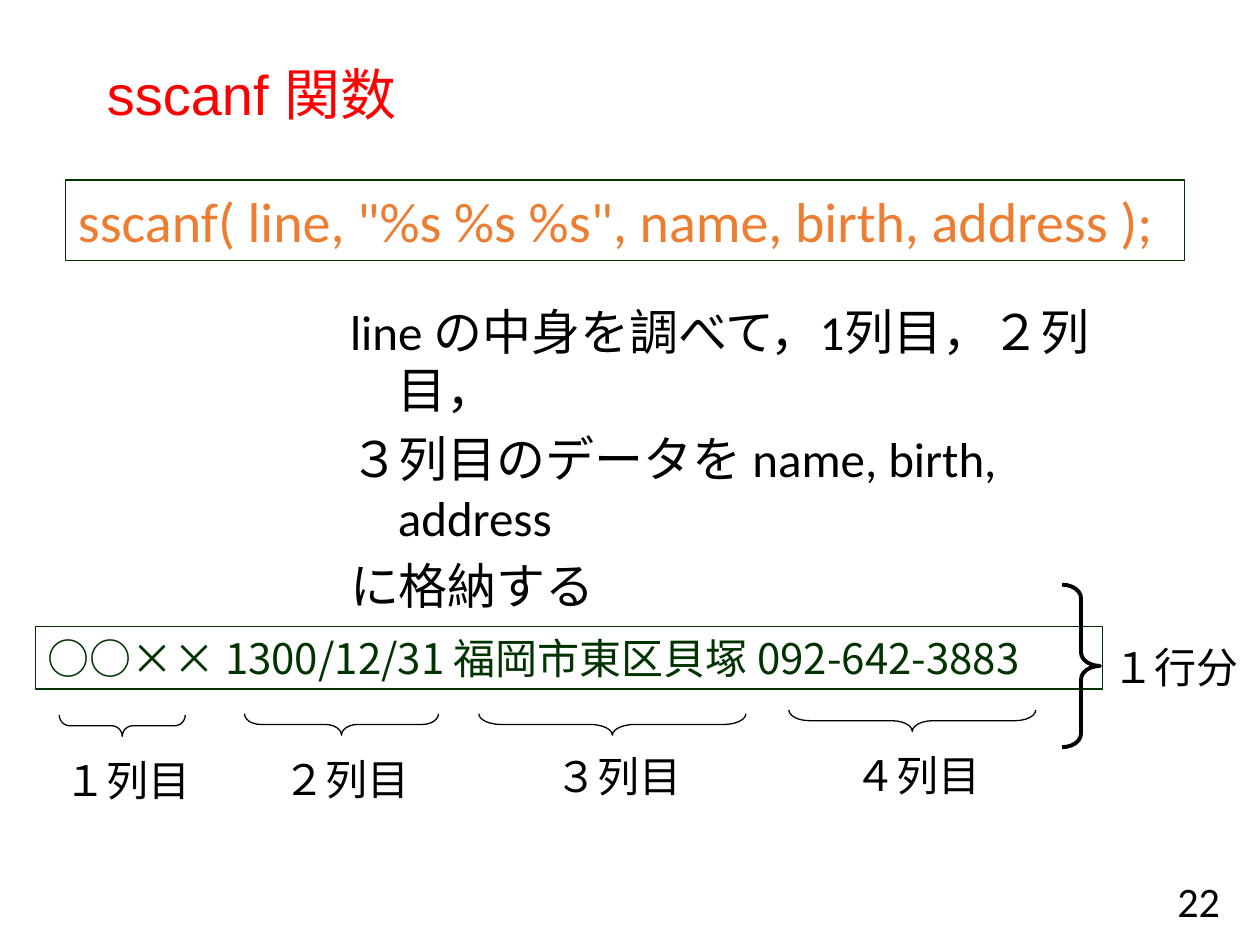
from lxml import etree
from pptx import Presentation
from pptx.dml.color import RGBColor
from pptx.enum.shapes import MSO_SHAPE
from pptx.enum.text import MSO_ANCHOR, MSO_AUTO_SIZE, PP_ALIGN
from pptx.oxml.ns import qn
from pptx.util import Inches, Pt

COLORS = {"title": "FF0000", "code": "ED7D31", "green": "003300", "black": "000000"}
LATIN, JAPANESE = "Calibri", "Noto Sans CJK JP"


def color(name):
    return RGBColor.from_string(COLORS[name])


def write(shape, text, size, ink="black", font=LATIN, wrap=False,
          anchor=MSO_ANCHOR.TOP, align=PP_ALIGN.LEFT):
    frame = shape.text_frame
    frame.text = text
    frame.word_wrap = wrap
    frame.auto_size = MSO_AUTO_SIZE.NONE if wrap else MSO_AUTO_SIZE.SHAPE_TO_FIT_TEXT
    frame.vertical_anchor = anchor
    for paragraph in frame.paragraphs:
        paragraph.alignment = align
        for run in paragraph.runs:
            run.font.size = Pt(size)
            run.font.name = font
            run.font.color.rgb = color(ink)
            east_asian = etree.SubElement(run.font._element, qn("a:ea"))
            east_asian.set("typeface", JAPANESE)
    return frame


def add_text(slide, box, text, size, **style):
    return write(slide.shapes.add_textbox(*map(Inches, box)), text, size, **style)


def add_outline(slide, kind, box, ink, width):
    shape = slide.shapes.add_shape(kind, *map(Inches, box))
    shape.shadow.inherit = False
    shape.fill.background()
    shape.line.color.rgb = color(ink)
    shape.line.width = Pt(width)
    return shape


def add_framed_text(slide, box, text, size, **style):
    frame = add_outline(slide, MSO_SHAPE.RECTANGLE, box, "green", 0.75)
    write(frame, text, size, **style)


def add_brace(slide, box, width):
    brace = add_outline(slide, MSO_SHAPE.RIGHT_BRACE, box, "black", width)
    thickness, length = box[2:]
    brace.adjustments[0] = length / thickness / 12
    return brace


def add_explanation(slide, box):
    lines = ["line の中身を調べて，1列目，２列目，",
             "３列目のデータを name, birth, address",
             "に格納する"]
    frame = add_text(slide, box, "\n".join(lines), 28, wrap=True)
    for index, paragraph in enumerate(frame.paragraphs):
        # Hanging indent
        properties = paragraph._p.get_or_add_pPr()
        properties.set("marL", str(Inches(0.38)))
        properties.set("indent", str(-Inches(0.38)))
        if index:
            paragraph.space_before = Pt(5.6)


def add_column_mark(slide, center, middle, length, label_box, label):
    # A right brace turned to point down
    thickness = 0.17
    box = (center - thickness / 2, middle - length / 2, thickness, length)
    add_brace(slide, box, 0.75).rotation = 90
    add_text(slide, label_box, label, 24)


def add_data_line(slide, box):
    left, top, width, height = box
    add_framed_text(slide, box, "○○×× 1300/12/31 福岡市東区貝塚 092-642-3883", 24,
                    ink="green", font=JAPANESE)
    # Whole line
    add_brace(slide, (left + 8.15, top - 0.33, 0.3, 1.29), 2.25)
    add_text(slide, (left + 8.45, top + 0.07, 1.21, height), "１行分", 24)
    # Columns: brace centre, brace middle, brace length, label left, label top
    columns = [("１列目", 0.69, 0.79, 1, 0.13, 0.97),
               ("２列目", 2.43, 0.78, 1.54, 1.87, 0.96),
               ("３列目", 4.58, 0.78, 2.12, 4.03, 0.94),
               ("４列目", 6.96, 0.75, 1.96, 6.4, 0.93)]
    for label, center, middle, length, label_left, label_top in columns:
        label_box = (left + label_left, top + label_top, 1.21, height)
        add_column_mark(slide, left + center, top + middle, length, label_box, label)


def main():
    prs = Presentation()
    prs.slide_width, prs.slide_height = Inches(10), Inches(7.5)
    slide = prs.slides.add_slide(prs.slide_layouts[6])

    # Title
    title = add_text(slide, (0.75, 0.32, 8.5, 0.91), "sscanf 関数", 32, ink="title",
                     font="Arial", wrap=True, anchor=MSO_ANCHOR.MIDDLE)
    title.paragraphs[0].line_spacing = 0.9

    # Call and what it does
    add_explanation(slide, (2.68, 2.34, 6.24, 1.27))
    add_framed_text(slide, (0.52, 1.43, 8.88, 0.64),
                    'sscanf( line, "%s %s %s", name, birth, address );', 32, ink="code")

    # Sample line with its columns
    add_data_line(slide, (0.28, 4.97, 8.47, 0.5))

    # Page number
    add_text(slide, (7.53, 6.95, 2.25, 0.4), "22", 24, wrap=True,
             anchor=MSO_ANCHOR.MIDDLE, align=PP_ALIGN.RIGHT)
    prs.save("out.pptx")


if __name__ == "__main__":
    main()
